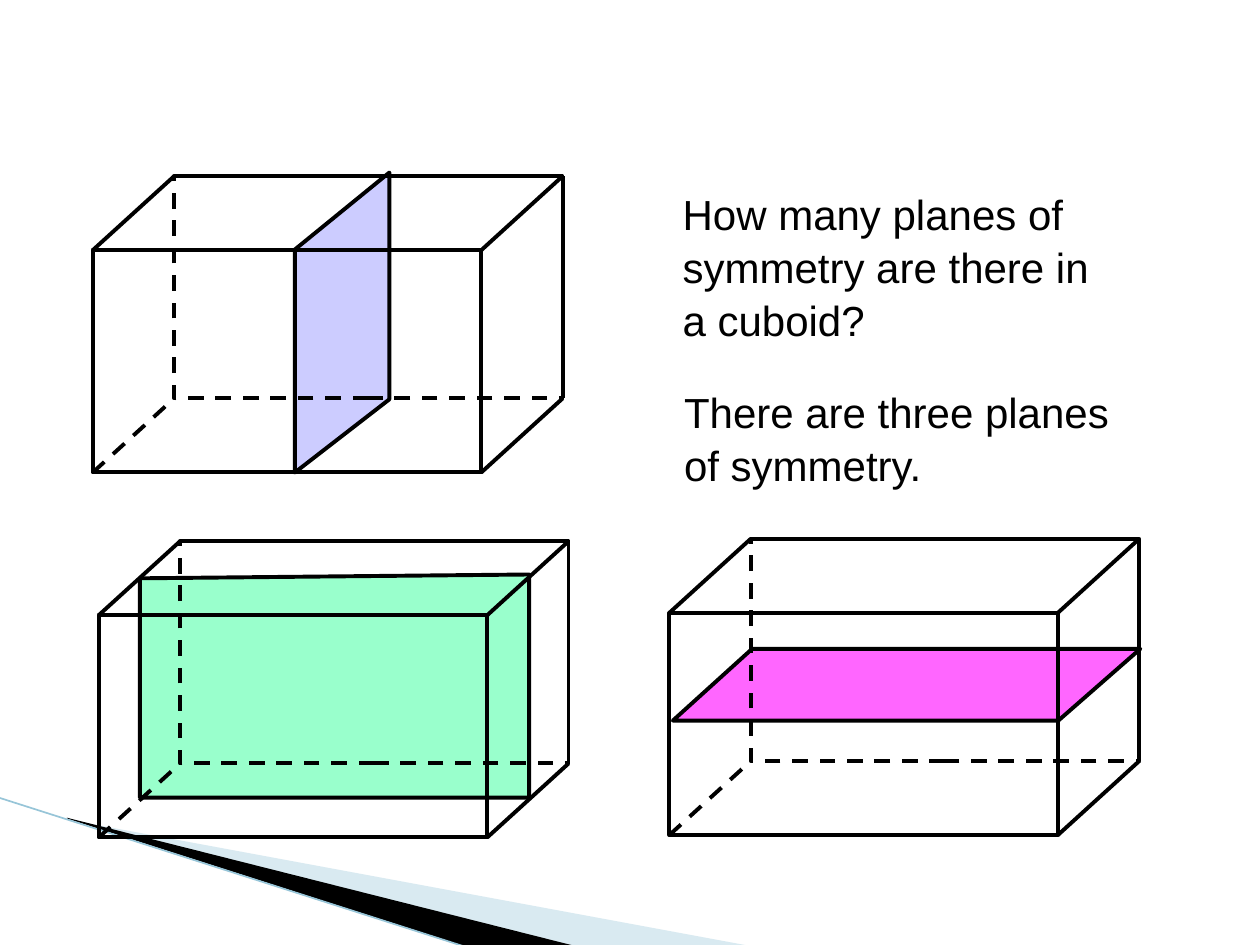
from lxml.etree import SubElement
from pptx import Presentation
from pptx.dml.color import RGBColor
from pptx.enum.dml import MSO_LINE
from pptx.enum.shapes import MSO_CONNECTOR, MSO_SHAPE
from pptx.enum.text import MSO_AUTO_SIZE
from pptx.oxml.ns import qn
from pptx.util import Pt

WIDE, HIGH, DEEP, RISE = 222, 127, 46.5, 42.3


def paint(item, color):
    """Set a fill or font colour from a hex string."""
    item.rgb = RGBColor.from_string(color)


def stroke(line, color="000000", width=2.25, dash=False):
    """Style an outline."""
    line.fill.solid()
    paint(line.fill.fore_color, color)
    line.width = Pt(width)
    if dash:
        line.dash_style = MSO_LINE.DASH


def add_line(shapes, start, end, **style):
    """Draw a straight line without a shadow."""
    line = shapes.add_connector(MSO_CONNECTOR.STRAIGHT, *map(Pt, start + end))
    SubElement(line._element.spPr, qn("a:effectLst"))
    stroke(line.line, **style)


def add_face(shapes, left, top, dash=False):
    """Draw the unfilled front or back face of a cuboid."""
    face = shapes.add_shape(MSO_SHAPE.RECTANGLE, *map(Pt, (left, top, WIDE, HIGH)))
    face.shadow.inherit = False
    face.fill.background()
    stroke(face.line, dash=dash)


def add_cuboid(slide, left, top):
    """Draw a grouped cuboid with its hidden edges dashed."""
    shapes = slide.shapes.add_group_shape().shapes
    right, base = left + WIDE, top + HIGH
    add_face(shapes, left, top)
    add_face(shapes, left + DEEP, top - RISE, dash=True)
    for x, y in ((left, top), (right, top), (right, base), (left, base)):
        add_line(shapes, (x, y), (x + DEEP, y - RISE), dash=(x, y) == (left, base))
    corner = (right + DEEP, top - RISE)
    add_line(shapes, corner, (right + DEEP, base - RISE))
    add_line(shapes, (left + DEEP, top - RISE), corner)


def add_plane(slide, points, color, edge=True, alpha=None):
    """Draw a filled polygon."""
    first, *rest = [tuple(map(Pt, point)) for point in points]
    pen = slide.shapes.build_freeform(*first)
    pen.add_line_segments(rest, close=True)
    plane = pen.convert_to_shape()
    plane.shadow.inherit = False
    plane.fill.solid()
    paint(plane.fill.fore_color, color)
    if alpha:
        tone = plane._element.spPr.find(qn("a:solidFill"))[0]
        SubElement(tone, qn("a:alpha"), val=str(alpha * 1000))
    if edge:
        stroke(plane.line)
    else:
        plane.line.fill.background()


def add_text(slide, text, left, top, width, height):
    """Add a wrapped text box."""
    box = slide.shapes.add_textbox(*map(Pt, (left, top, width, height)))
    frame = box.text_frame
    frame.word_wrap = True
    frame.auto_size = MSO_AUTO_SIZE.SHAPE_TO_FIT_TEXT
    frame.text = text
    para = frame.paragraphs[0]
    para.line_spacing = 1.05
    font = para.runs[0].font
    font.name, font.size = "Arial", Pt(24)
    paint(font.color, "000000")


def add_sweep(slide):
    """Draw the corner decoration."""
    add_plane(slide, [(39.6, 468.5), (428.4, 540.5), (328.3, 540.5)],
              "A0CBDC", edge=False, alpha=40)
    add_plane(slide, [(38.2, 467.3), (329, 540.7), (267.8, 541.4), (38.9, 468)],
              "000000", edge=False)
    add_line(slide.shapes, (-0.7, 455.8), (267.1, 541.4), color="97C5D8", width=0.95)


def main():
    """Build the slide."""
    deck = Presentation()
    deck.slide_width, deck.slide_height = Pt(720), Pt(540)
    slide = deck.slides.add_slide(deck.slide_layouts[6])
    add_sweep(slide)
    add_plane(slide, [(168.5, 270), (168.5, 142.6), (222.5, 98.6), (222.5, 228.2)], "CCCCFF")
    add_cuboid(slide, 53, 143)
    add_plane(slide, [(384.5, 411.8), (604.8, 411.8), (651.6, 370.8), (429.8, 370.8)], "FF66FF")
    add_cuboid(slide, 382.5, 350.2)
    add_plane(slide, [(79.9, 330.5), (79.9, 455.8), (302.4, 455.8), (302.4, 328.3)], "99FFCC")
    add_cuboid(slide, 56.4, 351.6)
    add_text(slide, "How many planes of symmetry are there in a cuboid?", 383, 103, 260, 94.3)
    add_text(slide, "There are three planes of symmetry.", 383.8, 216, 275.8, 65.5)
    deck.save("out.pptx")


if __name__ == "__main__":
    main()
